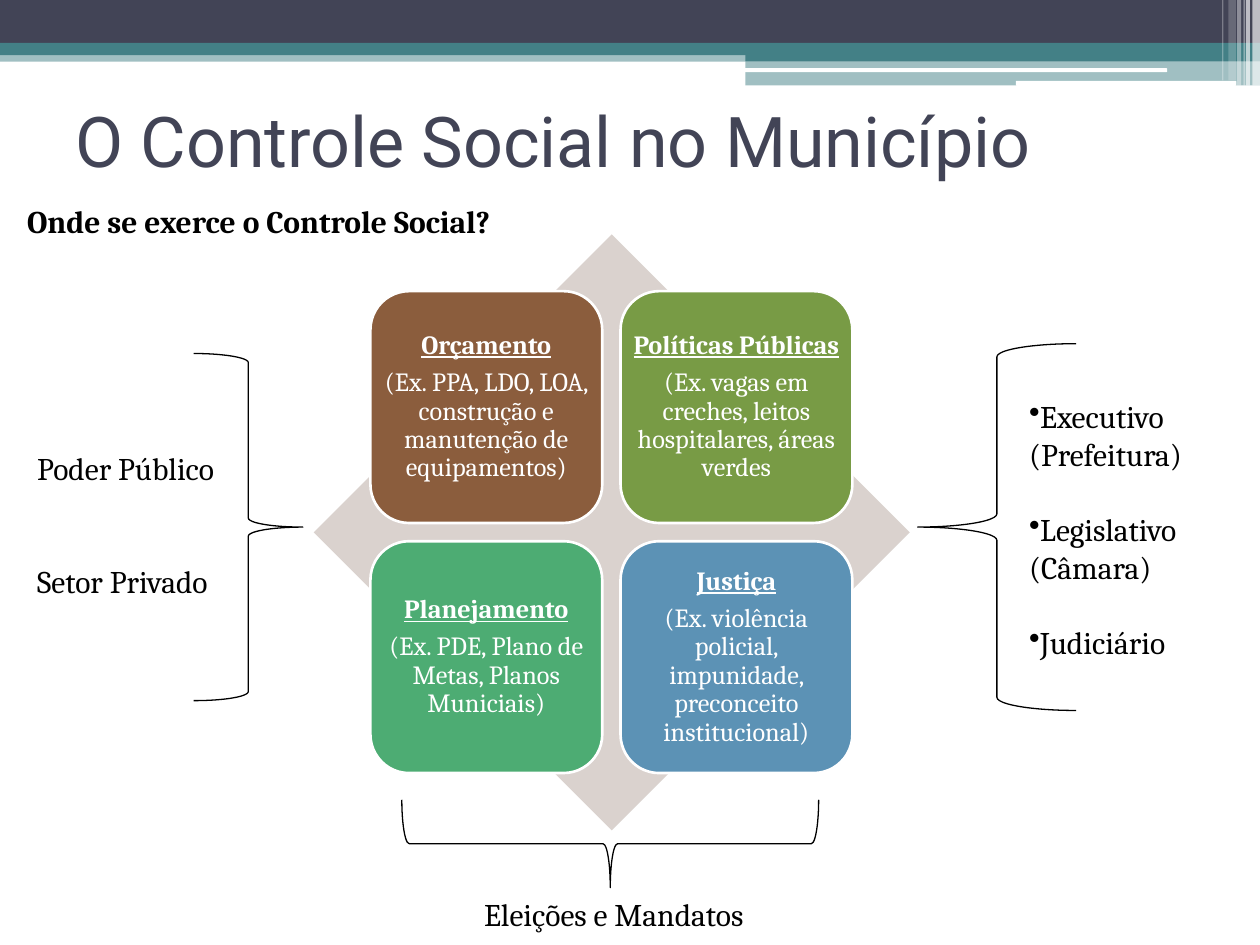
from typing import NamedTuple, Optional

from lxml import etree
from pptx import Presentation
from pptx.dml.color import RGBColor
from pptx.enum.shapes import MSO_SHAPE
from pptx.enum.text import MSO_ANCHOR, PP_ALIGN
from pptx.oxml.ns import qn
from pptx.util import Pt

RECT, ROUND = MSO_SHAPE.RECTANGLE, MSO_SHAPE.ROUNDED_RECTANGLE
DIAMOND = MSO_SHAPE.DIAMOND
LEFT_BRACE, RIGHT_BRACE = MSO_SHAPE.LEFT_BRACE, MSO_SHAPE.RIGHT_BRACE
MIDDLE, CENTER = MSO_ANCHOR.MIDDLE, PP_ALIGN.CENTER

WHITE = RGBColor(0xFF, 0xFF, 0xFF)
BLACK = RGBColor(0x00, 0x00, 0x00)
NAVY = RGBColor(0x42, 0x44, 0x56)
TEAL = RGBColor(0x43, 0x80, 0x86)
STONE = RGBColor(0xDA, 0xD2, 0xCE)
BROWN = RGBColor(0x8B, 0x5D, 0x3D)
OLIVE = RGBColor(0x78, 0x9B, 0x45)
GREEN = RGBColor(0x4D, 0xAC, 0x73)
BLUE = RGBColor(0x5C, 0x92, 0xB5)

BODY_FONT, TITLE_FONT = "Cambria", "Roboto"
LINE_GAP = 21.5  # height of one 18 pt line


class Box(NamedTuple):
    left: float
    top: float
    width: float
    height: float


class Band(NamedTuple):
    box: Box
    color: RGBColor
    opacity: int = 100
    kind: int = RECT


class Topic(NamedTuple):
    heading: str
    examples: str
    color: RGBColor


class Label(NamedTuple):
    box: Box
    lines: list[str]
    gap: float = 0
    bold: bool = False
    bullet: bool = False


class Brace(NamedTuple):
    kind: int
    box: Box
    rotation: int = 0


BANDS = [
    Band(Box(0, 28.8, 720, 6.5), TEAL, 50),
    Band(Box(0, 0, 720, 24.5), NAVY),
    Band(Box(0, 24.5, 720, 7), TEAL),
    Band(Box(426, 28, 294, 6.8), TEAL),
    Band(Box(426, 34.8, 294, 14), TEAL, 50),
    Band(Box(425.5, 39, 241.5, 2.2), WHITE, kind=ROUND),
    Band(Box(580.5, 46.2, 126, 2.8), WHITE, kind=ROUND),
    Band(Box(715.7, 0, 4.3, 49), WHITE, 65),
    Band(Box(712, 0, 2.2, 49), WHITE, 65),
    Band(Box(710.6, 0, 0.7, 49), WHITE, 60),
    Band(Box(707, 0, 2.2, 49), WHITE, 40),
    Band(Box(702, 0, 4.3, 46), WHITE, 20),
    Band(Box(698.4, 0, 0.7, 46), WHITE, 30),
]

TILE, TILE_STEP = 132.5, 142.9
TILE_LEFT, TILE_TOP = 211.7, 166.4
TOPICS = [
    Topic("Orçamento", "(Ex. PPA, LDO, LOA, construção e manutenção de equipamentos)", BROWN),
    Topic("Políticas Públicas", "(Ex. vagas em creches, leitos hospitalares, áreas verdes", OLIVE),
    Topic("Planejamento", "(Ex. PDE, Plano de Metas, Planos Municiais)", GREEN),
    Topic("Justiça", "(Ex. violência policial, impunidade, preconceito institucional)", BLUE),
]

LABELS = [
    Label(Box(581, 223.2, 127.5, 160), ["Executivo (Prefeitura)", "Legislativo (Câmara)", "Judiciário"],
          gap=LINE_GAP, bullet=True),
    Label(Box(8.4, 111.8, 329, 29), ["Onde se exerce o Controle Social?"], bold=True),
    Label(Box(14.2, 253, 130.5, 94.5), ["Poder Público", "Setor Privado"], gap=2 * LINE_GAP),
    Label(Box(269.5, 507.8, 181.5, 29), ["Eleições e Mandatos"]),
]

BRACES = [
    Brace(LEFT_BRACE, Box(524.4, 196.4, 90.5, 209.6)),
    Brace(RIGHT_BRACE, Box(110.7, 202, 62.4, 198.4)),
    Brace(RIGHT_BRACE, Box(323.6, 363, 50.2, 238.2), 90),
]


def add_shape(slide, kind: int, box: Box, fill: Optional[RGBColor] = None,
              line: Optional[RGBColor] = None, weight: float = 0.75):
    s = slide.shapes.add_shape(kind, *map(Pt, box))
    s.shadow.inherit = False
    if fill is None:
        s.fill.background()
    else:
        s.fill.solid()
        s.fill.fore_color.rgb = fill
    if line is None:
        s.line.fill.background()
    else:
        s.line.color.rgb = line
        s.line.width = Pt(weight)
    return s


def set_font(p, name: str, size: float, color: RGBColor, bold: bool = False) -> None:
    p.font.name = name
    p.font.size = Pt(size)
    p.font.color.rgb = color
    p.font.bold = bold


def add_band(slide, band: Band) -> None:
    s = add_shape(slide, band.kind, band.box, band.color)
    if band.opacity < 100:
        color = s.fill._xPr.find(qn("a:solidFill"))[0]
        etree.SubElement(color, qn("a:alpha"), val=str(band.opacity * 1000))


def add_text_box(slide, box: Box):
    tf = slide.shapes.add_textbox(*map(Pt, box)).text_frame
    tf.word_wrap = True
    return tf


def add_title(slide, text: str) -> None:
    tf = add_text_box(slide, Box(36, 37.4, 648, 84.2))
    tf.vertical_anchor = MIDDLE
    p = tf.paragraphs[0]
    p.text = text
    set_font(p, TITLE_FONT, 40, NAVY)


def add_topic(slide, topic: Topic, box: Box) -> None:
    tf = add_shape(slide, ROUND, box, topic.color, WHITE, 1.5).text_frame
    tf.word_wrap = True
    tf.vertical_anchor = MIDDLE
    tf.margin_left = tf.margin_right = tf.margin_top = tf.margin_bottom = 0
    tf.text = f"{topic.heading}\n{topic.examples}"
    for p, is_heading in zip(tf.paragraphs, (True, False)):
        set_font(p, BODY_FONT, 15, WHITE, is_heading)
        p.font.underline = is_heading
        p.alignment = CENTER
        p.line_spacing = 0.9
        p.space_after = Pt(5.25)


def add_label(slide, label: Label) -> None:
    tf = add_text_box(slide, label.box)
    tf.text = "\n".join(label.lines)
    for i, p in enumerate(tf.paragraphs):
        set_font(p, BODY_FONT, 18, BLACK, label.bold)
        if i:
            p.space_before = Pt(label.gap)
        if label.bullet:
            bullet = etree.Element(qn("a:buChar"), char="•")
            p._p.get_or_add_pPr().insert_element_before(bullet, "a:tabLst", "a:defRPr", "a:extLst")


def main() -> None:
    prs = Presentation()
    prs.slide_width, prs.slide_height = Pt(720), Pt(540)
    slide = prs.slides.add_slide(prs.slide_layouts[6])

    for band in BANDS:
        add_band(slide, band)
    add_title(slide, "O Controle Social no Município")

    add_shape(slide, DIAMOND, Box(179.3, 133.9, 340.6, 340.6), STONE)
    for i, topic in enumerate(TOPICS):
        row, col = divmod(i, 2)
        add_topic(slide, topic, Box(TILE_LEFT + col * TILE_STEP, TILE_TOP + row * TILE_STEP, TILE, TILE))

    for brace in BRACES:
        add_shape(slide, brace.kind, brace.box, line=BLACK).rotation = brace.rotation
    for label in LABELS:
        add_label(slide, label)

    prs.save("out.pptx")


if __name__ == "__main__":
    main()
